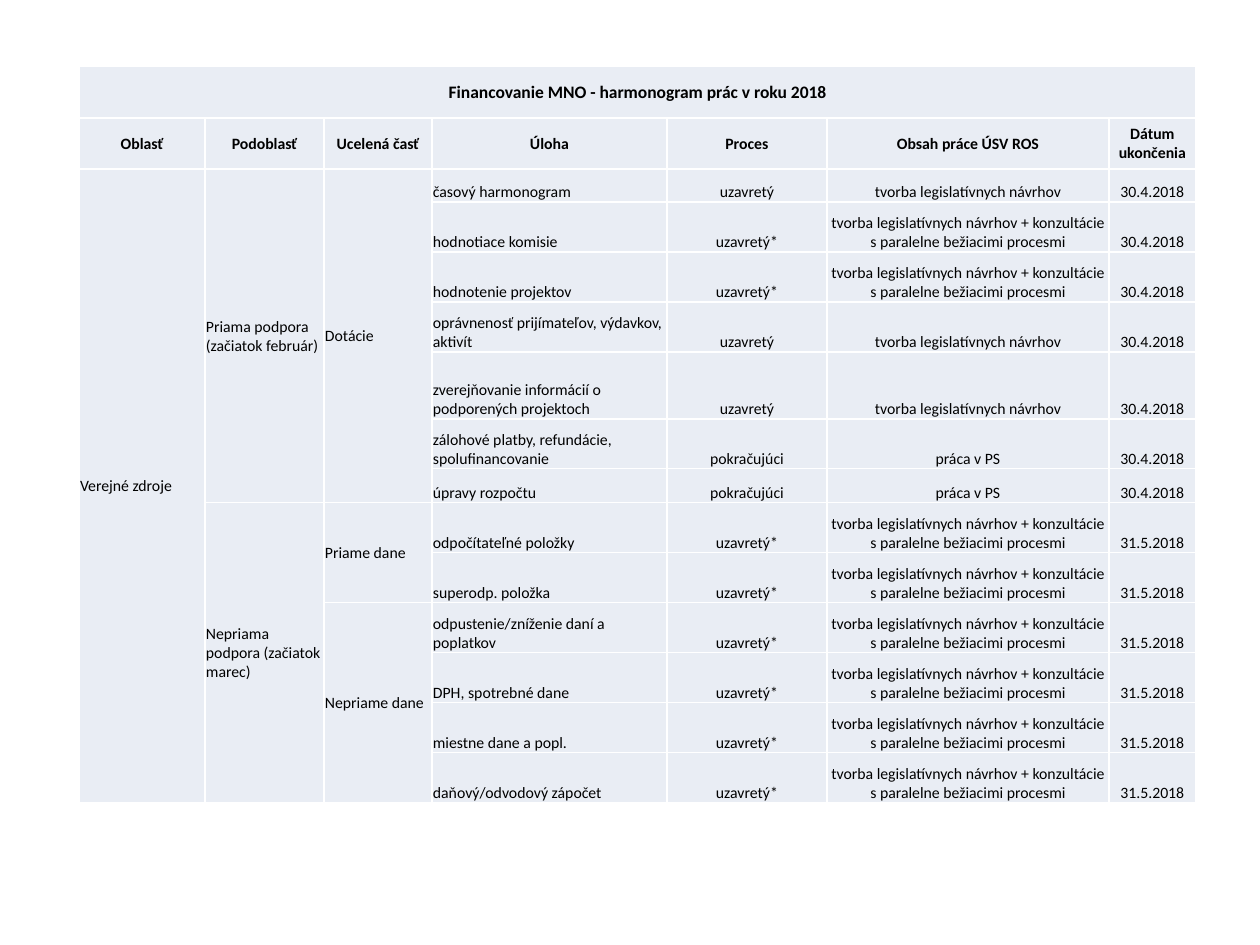
from lxml.etree import SubElement
from pptx import Presentation
from pptx.dml.color import RGBColor
from pptx.enum.text import MSO_ANCHOR, PP_ALIGN
from pptx.oxml.ns import qn
from pptx.util import Emu, Pt

PX = 914400 // 126
WHITE = RGBColor(0xFF, 0xFF, 0xFF)
BLACK = RGBColor(0, 0, 0)
PALE_BLUE = RGBColor(0xE9, 0xED, 0xF4)
FONT = "Calibri"

LEFT, TOP = 79, 66
COLUMN_WIDTHS = [126, 119, 108, 235, 160, 282, 87]
ROW_HEIGHTS = [52, 51, 33, 50, 50, 50, 67, 50, 34] + [50] * 6

TITLE = "Financovanie MNO - harmonogram prác v roku 2018"
HEADERS = ["Oblasť", "Podoblasť", "Ucelená časť", "Úloha", "Proces",
           "Obsah práce ÚSV ROS", "Dátum ukončenia"]
FIRST_TASK_ROW = 2

CLOSED, CLOSED_NOTE, ONGOING = "uzavretý", "uzavretý*", "pokračujúci"
DRAFTING = "tvorba legislatívnych návrhov"
CONSULTING = DRAFTING + " + konzultácie s paralelne bežiacimi procesmi"
WORKING_GROUP = "práca v PS"
APRIL, MAY = "30.4.2018", "31.5.2018"

TASKS = [
    ("časový harmonogram", CLOSED, DRAFTING, APRIL),
    ("hodnotiace komisie", CLOSED_NOTE, CONSULTING, APRIL),
    ("hodnotenie projektov", CLOSED_NOTE, CONSULTING, APRIL),
    ("oprávnenosť prijímateľov, výdavkov, aktivít", CLOSED, DRAFTING, APRIL),
    ("zverejňovanie informácií o podporených projektoch", CLOSED, DRAFTING, APRIL),
    ("zálohové platby, refundácie, spolufinancovanie", ONGOING, WORKING_GROUP, APRIL),
    ("úpravy rozpočtu", ONGOING, WORKING_GROUP, APRIL),
    ("odpočítateľné položky", CLOSED_NOTE, CONSULTING, MAY),
    ("superodp. položka", CLOSED_NOTE, CONSULTING, MAY),
    ("odpustenie/zníženie daní a poplatkov", CLOSED_NOTE, CONSULTING, MAY),
    ("DPH, spotrebné dane", CLOSED_NOTE, CONSULTING, MAY),
    ("miestne dane a popl.", CLOSED_NOTE, CONSULTING, MAY),
    ("daňový/odvodový zápočet", CLOSED_NOTE, CONSULTING, MAY),
]

# For each of the first three columns: (label, number of task rows it covers)
GROUPS = [
    [("Verejné zdroje", 13)],
    [("Priama podpora (začiatok február)", 7),
     ("Nepriama podpora (začiatok marec)", 6)],
    [("Dotácie", 7), ("Priame dane", 2), ("Nepriame dane", 4)],
]


def px(value):
    return Emu(value * PX)


def add_borders(cell, color=WHITE, width=Pt(1)):
    properties = cell._tc.get_or_add_tcPr()
    for side in ("lnL", "lnR", "lnT", "lnB"):
        line = SubElement(properties, qn(f"a:{side}"), w=str(width))
        fill = SubElement(line, qn("a:solidFill"))
        SubElement(fill, qn("a:srgbClr"), val=str(color))


def style_cell(cell):
    add_borders(cell)
    cell.fill.solid()
    cell.fill.fore_color.rgb = PALE_BLUE
    cell.margin_left = cell.margin_right = cell.margin_top = px(1)
    cell.margin_bottom = 0


def write_cell(cell, text, size=9, bold=False, align=PP_ALIGN.CENTER,
               anchor=MSO_ANCHOR.MIDDLE):
    cell.vertical_anchor = anchor
    paragraph = cell.text_frame.paragraphs[0]
    paragraph.alignment = align
    run = paragraph.add_run()
    run.text = text
    run.font.name = FONT
    run.font.size = Pt(size)
    run.font.bold = bold
    run.font.color.rgb = BLACK


def add_schedule_table(slide):
    shape = slide.shapes.add_table(
        len(ROW_HEIGHTS), len(COLUMN_WIDTHS), px(LEFT), px(TOP),
        px(sum(COLUMN_WIDTHS)), px(sum(ROW_HEIGHTS)))
    table = shape.table
    table.first_row = table.horz_banding = False
    for column, width in zip(table.columns, COLUMN_WIDTHS):
        column.width = px(width)
    for row, height in zip(table.rows, ROW_HEIGHTS):
        row.height = px(height)
    for cell in table.iter_cells():
        style_cell(cell)
    return table


def fill_headings(table):
    table.cell(0, 0).merge(table.cell(0, len(HEADERS) - 1))
    write_cell(table.cell(0, 0), TITLE, size=10, bold=True)
    for column, header in enumerate(HEADERS):
        write_cell(table.cell(1, column), header, bold=True)


def fill_groups(table):
    for column, groups in enumerate(GROUPS):
        row = FIRST_TASK_ROW
        for label, count in groups:
            cell = table.cell(row, column)
            cell.merge(table.cell(row + count - 1, column))
            write_cell(cell, label, align=PP_ALIGN.LEFT)
            row += count


def fill_tasks(table):
    task_column = len(GROUPS)
    for row, task in enumerate(TASKS, FIRST_TASK_ROW):
        for column, text in enumerate(task, task_column):
            align = PP_ALIGN.LEFT if column == task_column else PP_ALIGN.CENTER
            write_cell(table.cell(row, column), text, align=align,
                       anchor=MSO_ANCHOR.BOTTOM)


def main():
    presentation = Presentation()
    presentation.slide_width = px(1260)
    presentation.slide_height = px(945)
    slide = presentation.slides.add_slide(presentation.slide_layouts[6])
    table = add_schedule_table(slide)
    fill_headings(table)
    fill_groups(table)
    fill_tasks(table)
    presentation.save("out.pptx")


if __name__ == "__main__":
    main()
